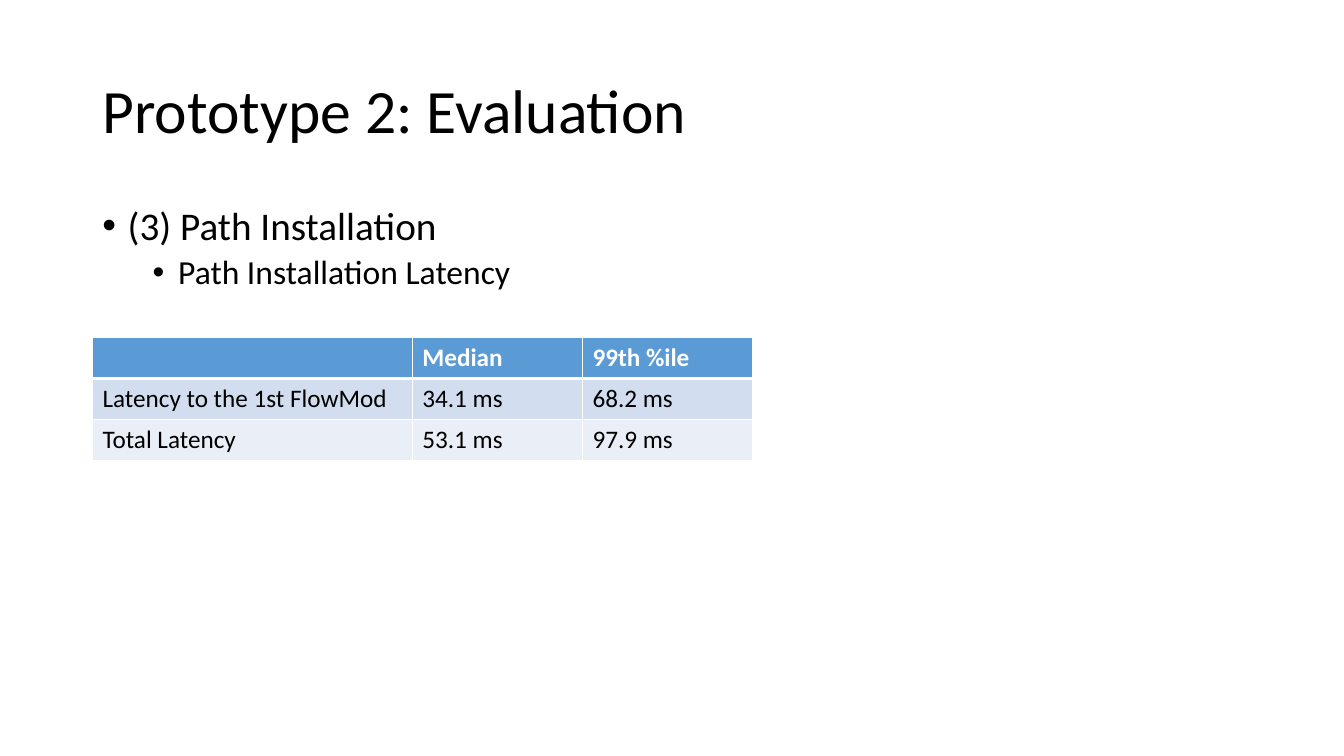
from lxml import etree
from pptx import Presentation, util as u
from pptx.dml.color import RGBColor
from pptx.enum import text as t
from pptx.oxml.ns import qn


def color(value):
    return RGBColor.from_string(value)


def write(paragraph, content, size=18, fill="000000", bold=False, line=1.0, before=0):
    paragraph.alignment = t.PP_ALIGN.LEFT
    paragraph.line_spacing = line
    paragraph.space_before = u.Pt(before)
    run = paragraph.add_run()
    run.text = content
    run.font.name = "Calibri"
    run.font.size = u.Pt(size)
    run.font.bold = bold
    run.font.color.rgb = color(fill)


presentation = Presentation()
presentation.slide_width = u.Cm(33.87)
presentation.slide_height = u.Cm(19.05)
slide = presentation.slides.add_slide(presentation.slide_layouts[5])
left, width = u.Cm(2.33), u.Cm(29.21)

title = slide.shapes.title
title.left, title.top, title.width, title.height = left, u.Cm(1.01), width, u.Cm(3.68)
title.text_frame.vertical_anchor = t.MSO_ANCHOR.MIDDLE
write(title.text_frame.paragraphs[0], "Prototype 2: Evaluation", size=44, line=0.9)

body = slide.shapes.add_textbox(left, u.Cm(5.07), width, u.Cm(12.09))
body.text_frame.word_wrap = True
bullets = [
    ("(3) Path Installation", 0, 28, 10, 0.64),
    ("Path Installation Latency", 1, 24, 5, 1.91),
]
for content, level, size, before, indent in bullets:
    paragraph = body.text_frame.add_paragraph() if level else body.text_frame.paragraphs[0]
    paragraph.level = level
    write(paragraph, content, size=size, line=0.9, before=before)
    properties = paragraph._p.get_or_add_pPr()
    properties.set("marL", str(u.Cm(indent)))
    properties.set("indent", str(u.Cm(-0.64)))
    etree.SubElement(properties, qn("a:buFont"), typeface="Arial")
    etree.SubElement(properties, qn("a:buChar"), char="•")

rows = [
    ("", "Median", "99th %ile"),
    ("Latency to the 1st FlowMod", "34.1 ms", "68.2 ms"),
    ("Total Latency", "53.1 ms", "97.9 ms"),
]
row_fills = ["5B9BD5", "D2DEEF", "EAEFF7"]
column_widths = [8.06, 4.29, 4.29]
row_height = 1.03
table = slide.shapes.add_table(
    len(rows), len(column_widths), left, u.Cm(8.51),
    u.Cm(sum(column_widths)), u.Cm(row_height * len(rows)),
).table
for column, column_width in zip(table.columns, column_widths):
    column.width = u.Cm(column_width)

for row_index, values in enumerate(rows):
    header = row_index == 0
    table.rows[row_index].height = u.Cm(row_height)
    for column_index, value in enumerate(values):
        cell = table.cell(row_index, column_index)
        properties = cell._tc.get_or_add_tcPr()
        for side in ("L", "R", "T", "B"):
            thick = (header and side == "B") or (row_index == 1 and side == "T")
            border = etree.SubElement(properties, qn(f"a:ln{side}"), w=str(u.Pt(3 if thick else 1)))
            fill = etree.SubElement(border, qn("a:solidFill"))
            etree.SubElement(fill, qn("a:srgbClr"), val="FFFFFF")
        cell.fill.solid()
        cell.fill.fore_color.rgb = color(row_fills[row_index])
        if value:
            write(cell.text_frame.paragraphs[0], value, fill="FFFFFF" if header else "000000", bold=header)

presentation.save("out.pptx")
